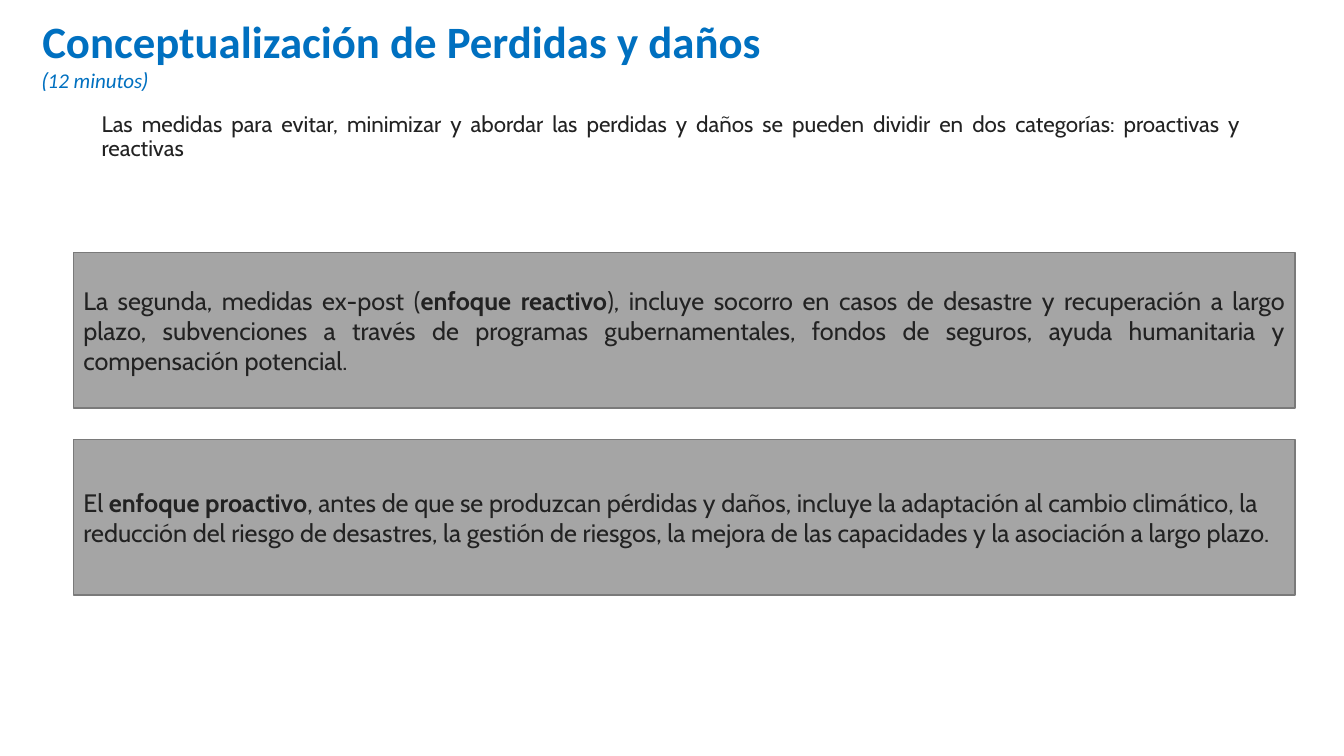
from pptx import Presentation
from pptx.dml.color import RGBColor
from pptx.enum.shapes import MSO_SHAPE
from pptx.enum.text import MSO_ANCHOR, MSO_AUTO_SIZE, PP_ALIGN
from pptx.util import Pt

RECTANGLE = MSO_SHAPE.RECTANGLE
TOP, MIDDLE = MSO_ANCHOR.TOP, MSO_ANCHOR.MIDDLE
LEFT, JUSTIFY = PP_ALIGN.LEFT, PP_ALIGN.JUSTIFY
NO_AUTOFIT = MSO_AUTO_SIZE.NONE

COLORS = {
    "title": "0070C0",
    "text": "222222",
    "box": "A5A5A5",
    "box_line": "7A7A7A",
}


def add_run(paragraph, text, size=18, font="Cabin", color="text", bold=False, italic=False):
    run = paragraph.add_run()
    run.text = text
    run.font.size = Pt(size)
    run.font.name = font
    run.font.bold = bold
    run.font.italic = italic
    run.font.color.rgb = RGBColor.from_string(COLORS[color])


def prepare_text(shape, anchor, alignment):
    frame = shape.text_frame
    frame.word_wrap = True
    frame.auto_size = NO_AUTOFIT
    frame.vertical_anchor = anchor
    paragraph = frame.paragraphs[0]
    paragraph.alignment = alignment
    return paragraph


presentation = Presentation()
presentation.slide_width, presentation.slide_height = Pt(960), Pt(540)
slide = presentation.slides.add_slide(presentation.slide_layouts.get_by_name("Title Only"))

# Title with its duration, which wraps onto the second line
title = slide.shapes.title
title.left, title.top, title.width, title.height = Pt(23), Pt(6.5), Pt(534), Pt(64)
paragraph = prepare_text(title, TOP, LEFT)
add_run(paragraph, "Conceptualización de Perdidas y daños ", size=32, font="Calibri",
        color="title", bold=True)
for text, font in (("(", "Cabin"), ("12 minutos", "Calibri"), (")", "Cabin")):
    add_run(paragraph, text, size=15, font=font, color="title", italic=True)

# Introduction
introduction = slide.shapes.add_textbox(Pt(65.5), Pt(77.5), Pt(828), Pt(44))
paragraph = prepare_text(introduction, TOP, JUSTIFY)
paragraph.line_spacing = 0.9
add_run(paragraph, "Las medidas para evitar, minimizar y abordar las perdidas y daños "
        "se pueden dividir en dos categorías: proactivas y reactivas", size=16)

# One box for each approach: alignment, opening, name in bold, explanation
approaches = [
    (JUSTIFY, "La segunda, medidas ex-post (", "enfoque reactivo",
     "), incluye socorro en casos de desastre y recuperación a largo plazo, "
     "subvenciones a través de programas gubernamentales, fondos de seguros, "
     "ayuda humanitaria y compensación potencial."),
    (LEFT, "El ", "enfoque proactivo",
     ", antes de que se produzcan pérdidas y daños, incluye la adaptación al cambio "
     "climático, la reducción del riesgo de desastres, la gestión de riesgos, la mejora "
     "de las capacidades y la asociación a largo plazo."),
]
for index, (alignment, opening, name, explanation) in enumerate(approaches):
    box = slide.shapes.add_shape(RECTANGLE, Pt(52.5), Pt(180.5 + 133.5 * index),
                                 Pt(872.5), Pt(111))
    box.shadow.inherit = False
    box.fill.solid()
    box.fill.fore_color.rgb = RGBColor.from_string(COLORS["box"])
    box.line.color.rgb = RGBColor.from_string(COLORS["box_line"])
    box.line.width = Pt(1)
    paragraph = prepare_text(box, MIDDLE, alignment)
    add_run(paragraph, opening)
    add_run(paragraph, name, bold=True)
    add_run(paragraph, explanation)

presentation.save("out.pptx")
